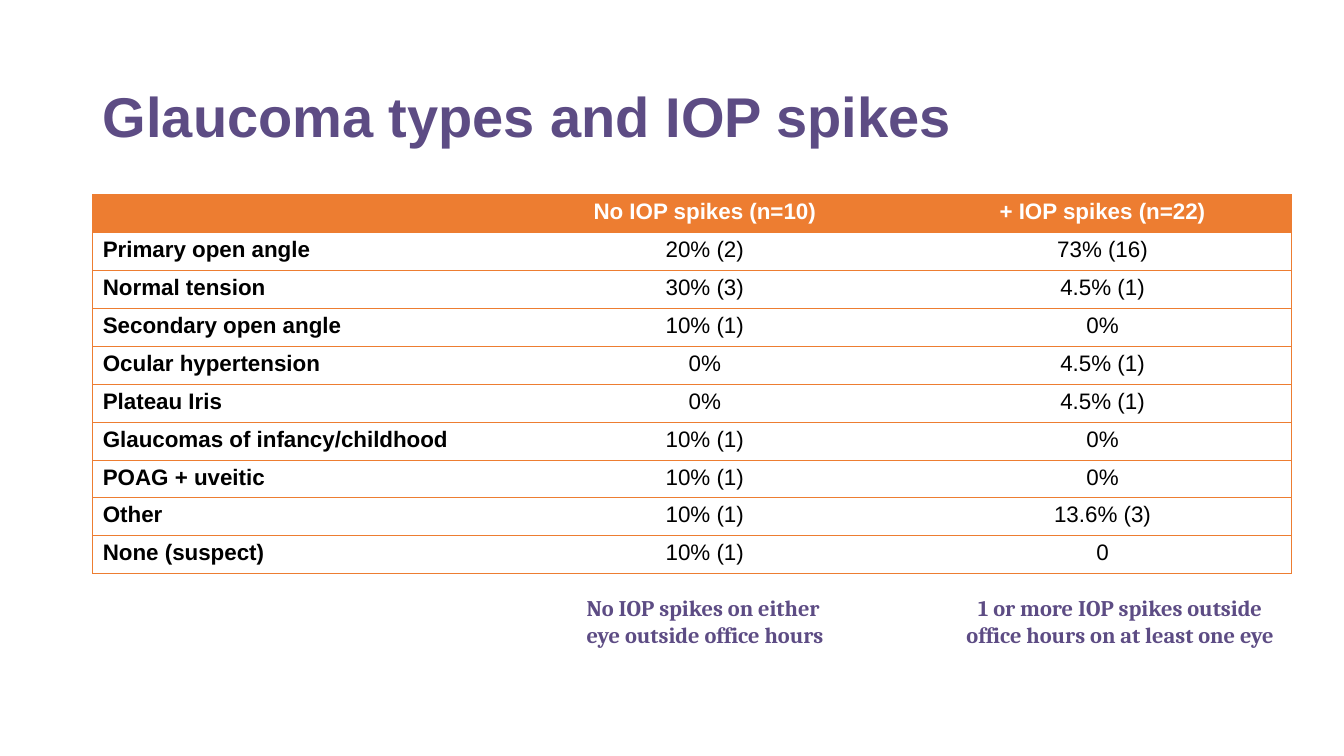
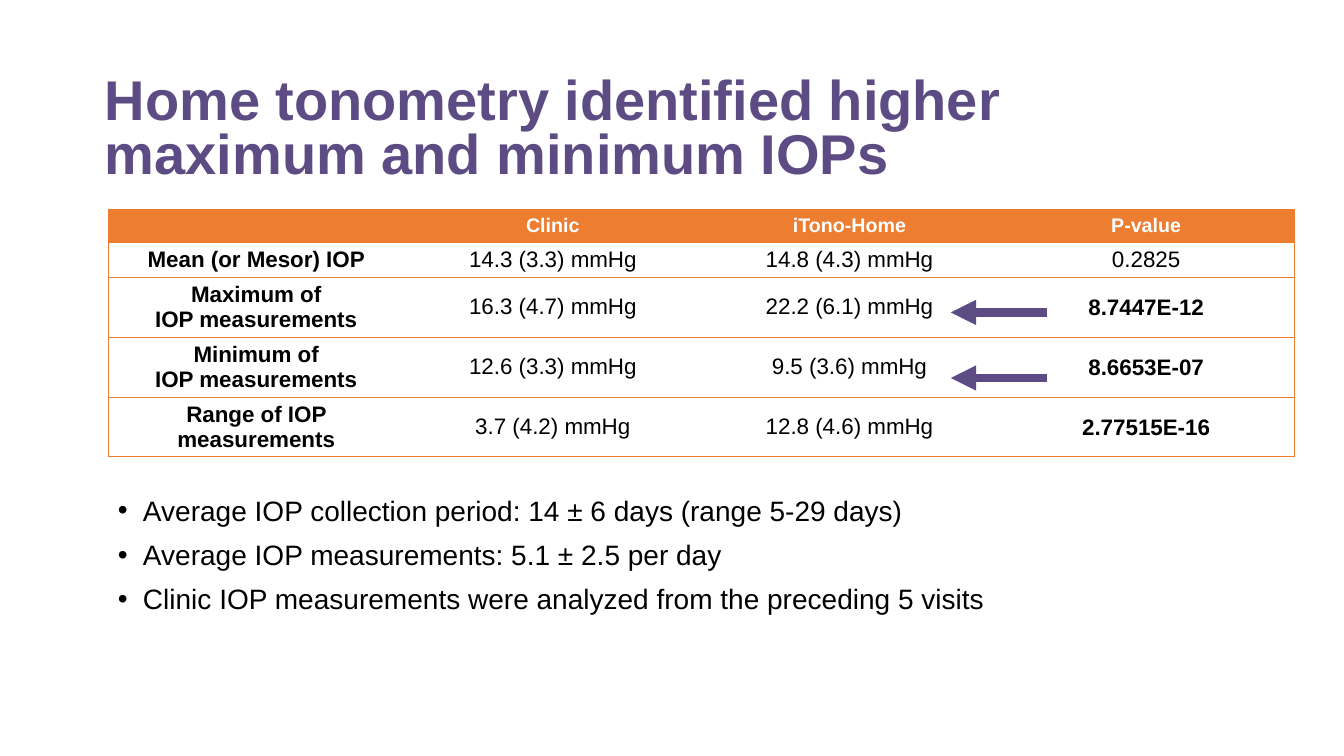
from dataclasses import dataclass

from lxml import etree
from pptx import Presentation
from pptx.dml.color import RGBColor
from pptx.enum import shapes, text
from pptx.oxml import ns
from pptx.util import Inches, Pt


@dataclass(frozen=True)
class Theme:
    purple: str = "5D4C84"
    orange: str = "ED7D31"
    white: str = "FFFFFF"
    black: str = "000000"
    sans: str = "Arial"
    serif: str = "Cambria"
    title: int = 40
    body: int = 20
    cell: int = 16
    head: int = 14
    edge: float = 0.5
    arrow: int = 6


T = Theme()
LEFT, MID = text.PP_ALIGN.LEFT, text.PP_ALIGN.CENTER
PLAIN = "{2D5ABB26-0587-4C30-8999-92F81FD0307C}"

TYPES = {
    "title": "Glaucoma types and IOP spikes",
    "at": (0.92, 0.81),
    "rows": [
        ("", "No IOP spikes (n=10)", "+ IOP spikes (n=22)"),
        ("Primary open angle", "20% (2)", "73% (16)"),
        ("Normal tension", "30% (3)", "4.5% (1)"),
        ("Secondary open angle", "10% (1)", "0%"),
        ("Ocular hypertension", "0%", "4.5% (1)"),
        ("Plateau Iris", "0%", "4.5% (1)"),
        ("Glaucomas of infancy/childhood", "10% (1)", "0%"),
        ("POAG + uveitic", "10% (1)", "0%"),
        ("Other", "10% (1)", "13.6% (3)"),
        ("None (suspect)", "10% (1)", "0"),
    ],
    "notes": [
        ("1 or more IOP spikes outside office hours on at least one eye", 9.41, 3.4, MID),
        ("No IOP spikes on either eye outside office hours", 5.72, 2.76, LEFT),
    ],
}

HOME = {
    "title": "Home tonometry identified higher maximum and minimum IOPs",
    "at": (0.94, 0.91),
    "rows": [
        ("", "Clinic", "iTono-Home", "P-value"),
        ("Mean (or Mesor) IOP", "14.3 (3.3) mmHg", "14.8 (4.3) mmHg", "0.2825"),
        ("Maximum of\nIOP measurements", "16.3 (4.7) mmHg", "22.2 (6.1) mmHg", "8.7447E-12"),
        ("Minimum of\nIOP measurements", "12.6 (3.3) mmHg", "9.5 (3.6) mmHg", "8.6653E-07"),
        ("Range of IOP measurements", "3.7 (4.2) mmHg", "12.8 (4.6) mmHg", "2.77515E-16"),
    ],
    "points": [
        "Average IOP collection period: 14 ± 6 days (range 5-29 days)",
        "Average IOP measurements: 5.1 ± 2.5 per day",
        "Clinic IOP measurements were analyzed from the preceding 5 visits",
    ],
    "arrows": (3.1, 3.75),
}


def tag(parent, name, **attrs):
    return etree.SubElement(parent, ns.qn(name), attrs)


def write(frame, words, size=T.cell, color=T.black, font=T.sans, bold=False,
          align=LEFT, space=None, gap=0, bullet=None):
    frame.word_wrap = True
    lines = words.split("\n")
    for i, line in enumerate(lines):
        para = frame.paragraphs[0] if i == 0 else frame.add_paragraph()
        para.text = line
        para.alignment = align
        if space:
            para.line_spacing = space
        para.space_before = Pt(gap if i else 0)
        if bullet:
            props = para._p.get_or_add_pPr()
            props.set("marL", str(Inches(0.25)))
            props.set("indent", str(-Inches(0.25)))
            tag(props, "a:buFont", typeface=T.sans)
            tag(props, "a:buChar", char=bullet)
        for face in [para.font] + [run.font for run in para.runs]:
            face.name, face.size, face.bold = font, Pt(size), bold
            face.color.rgb = RGBColor.from_string(color)


def box(slide, words, x, y, w, h, **form):
    frame = slide.shapes.add_textbox(*map(Inches, (x, y, w, h))).text_frame
    write(frame, words, **form)


def start(deck, data):
    slide = deck.slides.add_slide(deck.slide_layouts[5])
    title = slide.shapes.title
    x, y = data["at"]
    title.left, title.top, title.width, title.height = map(Inches, (x, y, 9.87, 0.78))
    frame = title.text_frame
    frame.auto_size = text.MSO_AUTO_SIZE.NONE
    frame.vertical_anchor = text.MSO_ANCHOR.MIDDLE
    write(frame, data["title"], size=T.title, color=T.purple, bold=True, space=0.8)
    return slide


def border(cell, first, last):
    props = cell._tc.get_or_add_tcPr()
    for side, show in (("L", first), ("R", last), ("T", True), ("B", True)):
        if show:
            line = tag(props, f"a:ln{side}", w=str(Pt(T.edge)))
            tag(tag(line, "a:solidFill"), "a:srgbClr", val=T.orange)


def grid(slide, rows, x, y, widths, heights, head=T.cell, side=LEFT,
         anchor=text.MSO_ANCHOR.TOP, strong=()):
    size = map(Inches, (x, y, sum(widths), sum(heights)))
    frame = slide.shapes.add_table(len(rows), len(widths), *size)
    table = frame.table
    table._tbl.tblPr.find(ns.qn("a:tableStyleId")).text = PLAIN
    for col, width in zip(table.columns, widths):
        col.width = Inches(width)
    for r, row in enumerate(rows):
        table.rows[r].height = Inches(heights[r])
        for c, words in enumerate(row):
            cell = table.cell(r, c)
            border(cell, c == 0, c == len(row) - 1)
            cell.fill.solid()
            cell.fill.fore_color.rgb = RGBColor.from_string(T.white if r else T.orange)
            cell.vertical_anchor = anchor
            write(cell.text_frame, words, size=T.cell if r else head,
                  color=T.black if r else T.white,
                  bold=r == 0 or c == 0 or words in strong,
                  align=MID if c else side)
    return table


def arrow(slide, y, start=10.38, end=9.43):
    line = slide.shapes.add_connector(
        shapes.MSO_CONNECTOR.STRAIGHT, *map(Inches, (start, y, end, y)))
    line.line.color.rgb = RGBColor.from_string(T.purple)
    line.line.width = Pt(T.arrow)
    tag(line.line._get_or_add_ln(), "a:tailEnd", type="triangle")
    tag(line._element.spPr, "a:effectLst")


def types(deck):
    slide = start(deck, TYPES)
    rows = TYPES["rows"]
    grid(slide, rows, 0.92, 1.93, (4, 4.14, 3.75), [3.76 / len(rows)] * len(rows))
    for words, x, w, align in TYPES["notes"]:
        box(slide, words, x, 5.85, w, 0.64, color=T.purple, font=T.serif,
            bold=True, align=align)


def home(deck):
    slide = start(deck, HOME)
    rows = HOME["rows"]
    table = grid(slide, rows, 1.07, 2.08, [11.77 / 4] * 4, [0.32, 0.35] + [0.59] * 3,
                 head=T.head, side=MID, anchor=text.MSO_ANCHOR.MIDDLE,
                 strong=[row[-1] for row in rows[2:]])
    for r in range(1, len(rows)):
        cell = table.cell(r, 3)
        cell.margin_left = cell.margin_right = cell.margin_top = Inches(0.01)
        cell.margin_bottom = 0
    box(slide, "\n".join(HOME["points"]), 1.07, 4.88, 11.93, 1.71,
        size=T.body, space=0.9, gap=10, bullet="•")
    for y in HOME["arrows"]:
        arrow(slide, y)


def main():
    deck = Presentation()
    deck.slide_width, deck.slide_height = Inches(13.33), Inches(7.5)
    types(deck)
    home(deck)
    deck.save("out.pptx")


if __name__ == "__main__":
    main()
